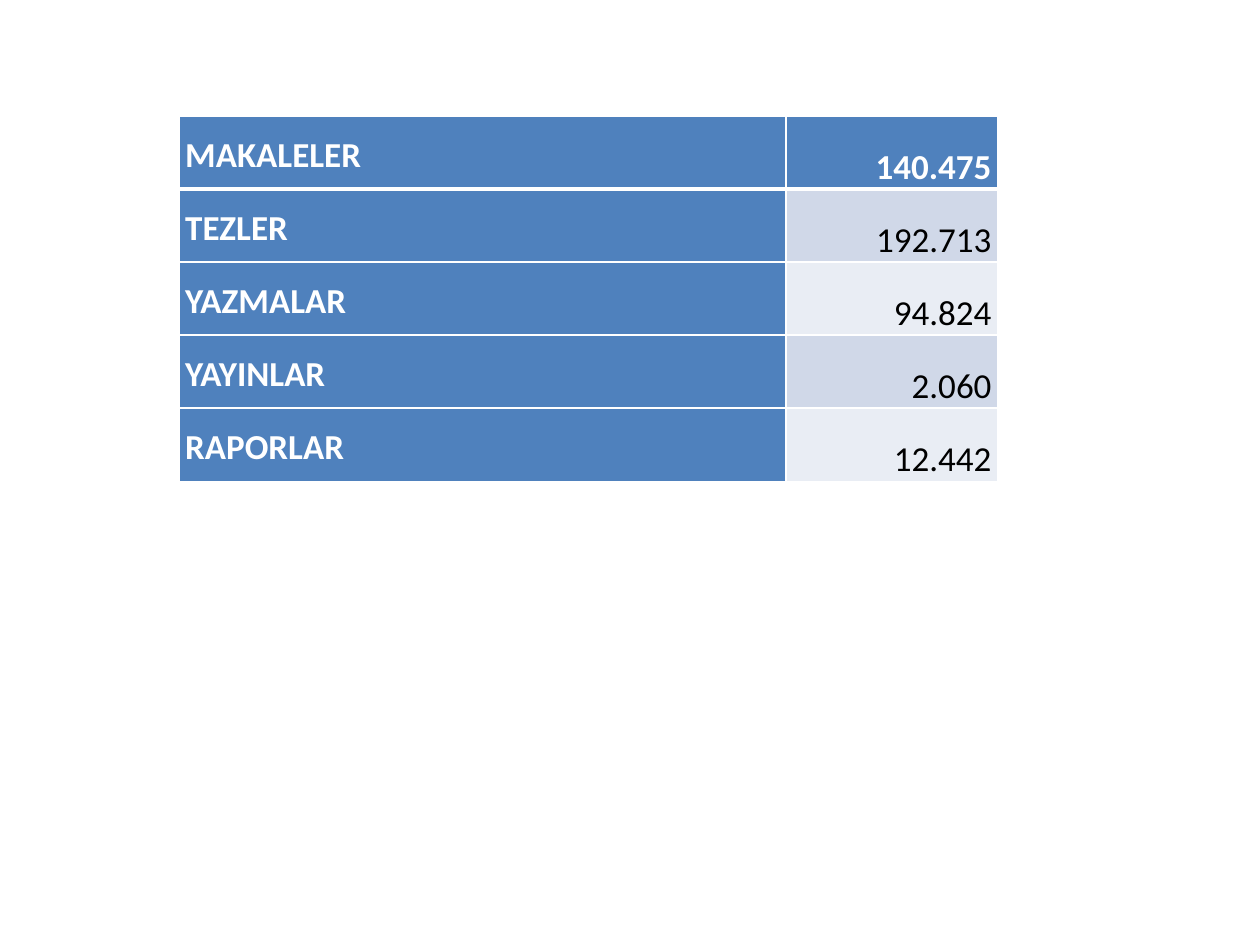
from dataclasses import dataclass

from lxml.etree import SubElement
from pptx import Presentation
from pptx.dml.color import RGBColor
from pptx.enum.text import MSO_ANCHOR, PP_ALIGN
from pptx.oxml.ns import qn
from pptx.util import Inches, Pt

RECORDS = [
    ("MAKALELER", "140.475"),
    ("TEZLER", "192.713"),
    ("YAZMALAR", "94.824"),
    ("YAYINLAR", "2.060"),
    ("RAPORLAR", "12.442"),
]
COLUMN_WIDTHS = (4.82, 1.68)
ROW_HEIGHT = 0.58
TABLE_LEFT, TABLE_TOP = 1.42, 0.92


@dataclass(frozen=True)
class Theme:
    font: str = "Calibri"
    size: int = 20
    header_fill: str = "4F81BD"
    header_text: str = "FFFFFF"
    body_text: str = "000000"
    bands: tuple = ("E9EDF4", "D0D8E8")
    border: str = "FFFFFF"
    thin: int = 1
    thick: int = 3


THEME = Theme()


def set_borders(cell, top, bottom):
    """Draw all four cell borders; call before the fill, which must follow in the XML."""
    properties = cell._tc.get_or_add_tcPr()
    widths = {"L": THEME.thin, "R": THEME.thin, "T": top, "B": bottom}
    for side, width in widths.items():
        line = SubElement(properties, qn(f"a:ln{side}"), w=str(Pt(width)))
        fill = SubElement(line, qn("a:solidFill"))
        SubElement(fill, qn("a:srgbClr"), val=THEME.border)


def format_cell(cell, text, row, column):
    is_label = column == 0
    is_header = is_label or row == 0
    set_borders(
        cell,
        top=THEME.thick if row == 1 else THEME.thin,
        bottom=THEME.thick if row == 0 else THEME.thin,
    )
    cell.fill.solid()
    fill = THEME.header_fill if is_header else THEME.bands[row % 2]
    cell.fill.fore_color.rgb = RGBColor.from_string(fill)
    cell.margin_left = cell.margin_right = Inches(0.05)
    cell.margin_top = cell.margin_bottom = 0
    cell.vertical_anchor = MSO_ANCHOR.MIDDLE if is_label else MSO_ANCHOR.BOTTOM

    cell.text_frame.text = text
    paragraph = cell.text_frame.paragraphs[0]
    paragraph.alignment = PP_ALIGN.LEFT if is_label else PP_ALIGN.RIGHT
    paragraph.line_spacing = 1.15
    font = paragraph.runs[0].font
    font.name, font.size, font.bold = THEME.font, Pt(THEME.size), is_header
    color = THEME.header_text if is_header else THEME.body_text
    font.color.rgb = RGBColor.from_string(color)


def add_records_table(slide):
    table = slide.shapes.add_table(
        len(RECORDS), len(COLUMN_WIDTHS),
        Inches(TABLE_LEFT), Inches(TABLE_TOP),
        Inches(sum(COLUMN_WIDTHS)), Inches(ROW_HEIGHT * len(RECORDS)),
    ).table
    table.first_col = True
    for column, width in zip(table.columns, COLUMN_WIDTHS):
        column.width = Inches(width)
    for row, record in enumerate(RECORDS):
        table.rows[row].height = Inches(ROW_HEIGHT)
        for column, text in enumerate(record):
            format_cell(table.cell(row, column), text, row, column)


def main():
    presentation = Presentation()
    presentation.slide_width = Inches(10)
    presentation.slide_height = Inches(7.5)
    slide = presentation.slides.add_slide(presentation.slide_layouts[6])
    add_records_table(slide)
    presentation.save("out.pptx")


if __name__ == "__main__":
    main()
